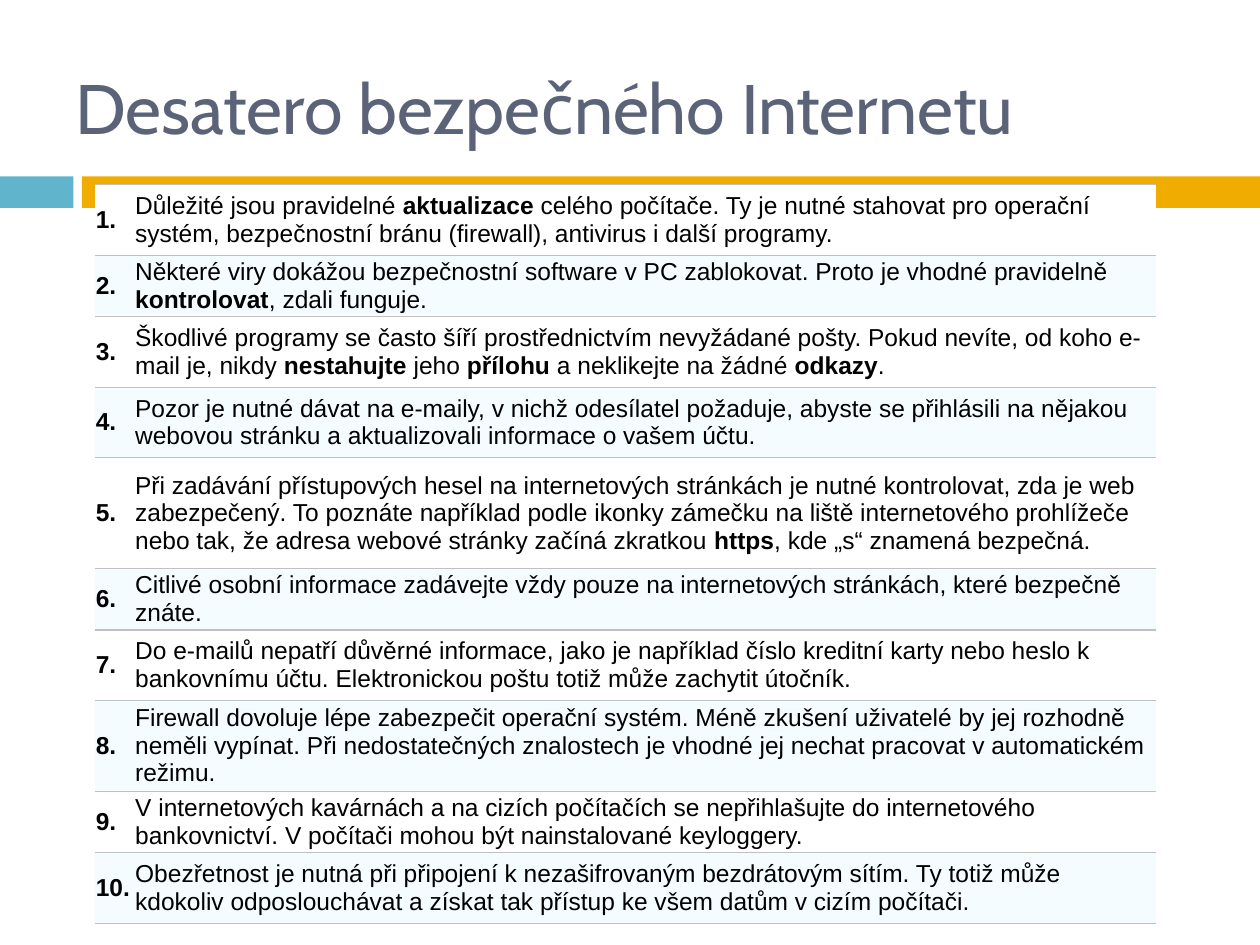
from dataclasses import dataclass
from lxml.etree import SubElement
from pptx import Presentation
from pptx.dml.color import RGBColor as Rgb
from pptx.enum.shapes import MSO_SHAPE as Shape
from pptx.enum.text import MSO_ANCHOR as Anchor, PP_ALIGN as Align
from pptx.oxml.ns import qn
from pptx.util import Pt


@dataclass(frozen=True)
class Theme:
    teal: str = "60B5CC"
    gold: str = "F0AD00"
    title: str = "5A6378"
    text: str = "000000"
    line: str = "C0C0C0"
    bands: tuple = ("FFFFFF", "F4FCFF")
    head: str = "Cabin"
    body: str = "Arial"
    big: float = 40
    small: float = 14


THEME = Theme()

# Row height in points and text; words between asterisks are bold
RULES = [
    (40.3, "Důležité jsou pravidelné *aktualizace* celého počítače. Ty je nutné stahovat "
           "pro operační systém, bezpečnostní bránu (firewall), antivirus i další programy."),
    (35, "Některé viry dokážou bezpečnostní software v PC zablokovat. Proto je vhodné "
         "pravidelně *kontrolovat*, zdali funguje."),
    (40.3, "Škodlivé programy se často šíří prostřednictvím nevyžádané pošty. Pokud nevíte, "
           "od koho e-mail je, nikdy *nestahujte* jeho *přílohu* a neklikejte na žádné *odkazy*."),
    (40.3, "Pozor je nutné dávat na e-maily, v nichž odesílatel požaduje, abyste se přihlásili "
           "na nějakou webovou stránku a aktualizovali informace o vašem účtu."),
    (63.4, "Při zadávání přístupových hesel na internetových stránkách je nutné kontrolovat, "
           "zda je web zabezpečený. To poznáte například podle ikonky zámečku na liště "
           "internetového prohlížeče nebo tak, že adresa webové stránky začíná zkratkou "
           "*https*, kde „s“ znamená bezpečná."),
    (35, "Citlivé osobní informace zadávejte vždy pouze na internetových stránkách, "
         "které bezpečně znáte."),
    (40.3, "Do e-mailů nepatří důvěrné informace, jako je například číslo kreditní karty nebo "
           "heslo k bankovnímu účtu. Elektronickou poštu totiž může zachytit útočník."),
    (52, "Firewall dovoluje lépe zabezpečit operační systém. Méně zkušení uživatelé by jej "
         "rozhodně neměli vypínat. Při nedostatečných znalostech je vhodné jej nechat "
         "pracovat v automatickém režimu."),
    (35, "V internetových kavárnách a na cizích počítačích se nepřihlašujte do internetového "
         "bankovnictví. V počítači mohou být nainstalované keyloggery."),
    (40.3, "Obezřetnost je nutná při připojení k nezašifrovaným bezdrátovým sítím. Ty totiž může "
           "kdokoliv odposlouchávat a získat tak přístup ke všem datům v cizím počítači."),
]


def style(run, face, size, color, bold=False):
    font = run.font
    font.name, font.size, font.bold = face, Pt(size), bold
    font.color.rgb = Rgb.from_string(color)


def add_bars(slide, x, y, w, h):
    """Short teal bar, a gap, then a gold bar to the right edge."""
    short, start = 42, 46.8
    for left, width, color in ((x, short, THEME.teal), (x + start, w - start, THEME.gold)):
        bar = slide.shapes.add_shape(Shape.RECTANGLE, Pt(left), Pt(y), Pt(width), Pt(h))
        bar.shadow.inherit = False
        bar.fill.solid()
        bar.fill.fore_color.rgb = Rgb.from_string(color)
        bar.line.fill.background()


def add_title(slide, x, y, w, h, text):
    frame = slide.shapes.add_textbox(Pt(x), Pt(y), Pt(w), Pt(h)).text_frame
    frame.word_wrap = True
    frame.vertical_anchor = Anchor.MIDDLE
    frame.text = text
    style(frame.paragraphs[0].runs[0], THEME.head, THEME.big, THEME.title)


def set_edges(cell):
    """Grey rules above and below, none at the sides."""
    props = cell._tc.get_or_add_tcPr()
    for side in "LRTB":
        edge = SubElement(props, qn(f"a:ln{side}"), w=str(Pt(0.75)))
        if side in "LR":
            SubElement(edge, qn("a:noFill"))
        else:
            fill = SubElement(edge, qn("a:solidFill"))
            SubElement(fill, qn("a:srgbClr"), val=THEME.line)


def fill_cell(cell, text, band):
    set_edges(cell)
    cell.fill.solid()
    cell.fill.fore_color.rgb = Rgb.from_string(band)
    cell.vertical_anchor = Anchor.MIDDLE
    cell.margin_left = cell.margin_right = Pt(0.75)
    cell.margin_top = cell.margin_bottom = Pt(0.75)
    para = cell.text_frame.paragraphs[0]
    para.alignment = Align.LEFT
    for i, part in enumerate(text.split("*")):
        if part:
            run = para.add_run()
            run.text = part
            style(run, THEME.body, THEME.small, THEME.text, bold=i % 2 == 1)


def add_rules(slide, x, y, w, rules):
    height = sum(high for high, _ in rules)
    table = slide.shapes.add_table(len(rules), 2, Pt(x), Pt(y), Pt(w), Pt(height)).table
    table.first_row = table.horz_banding = False
    first = 22.5
    table.columns[0].width, table.columns[1].width = Pt(first), Pt(w - first)
    for i, (high, text) in enumerate(rules):
        table.rows[i].height = Pt(high)
        band = THEME.bands[i % 2]
        fill_cell(table.cell(i, 0), f"*{i + 1}.*", band)
        fill_cell(table.cell(i, 1), text, band)


def main():
    deck = Presentation()
    deck.slide_width, deck.slide_height = Pt(720), Pt(540)
    slide = deck.slides.add_slide(deck.slide_layouts[6])
    add_bars(slide, 0, 100.8, 720, 18)
    add_title(slide, 36, 21.6, 648, 78.5, "Desatero bezpečného Internetu")
    add_rules(slide, 54, 105.5, 606.7, RULES)
    deck.save("out.pptx")


if __name__ == "__main__":
    main()
